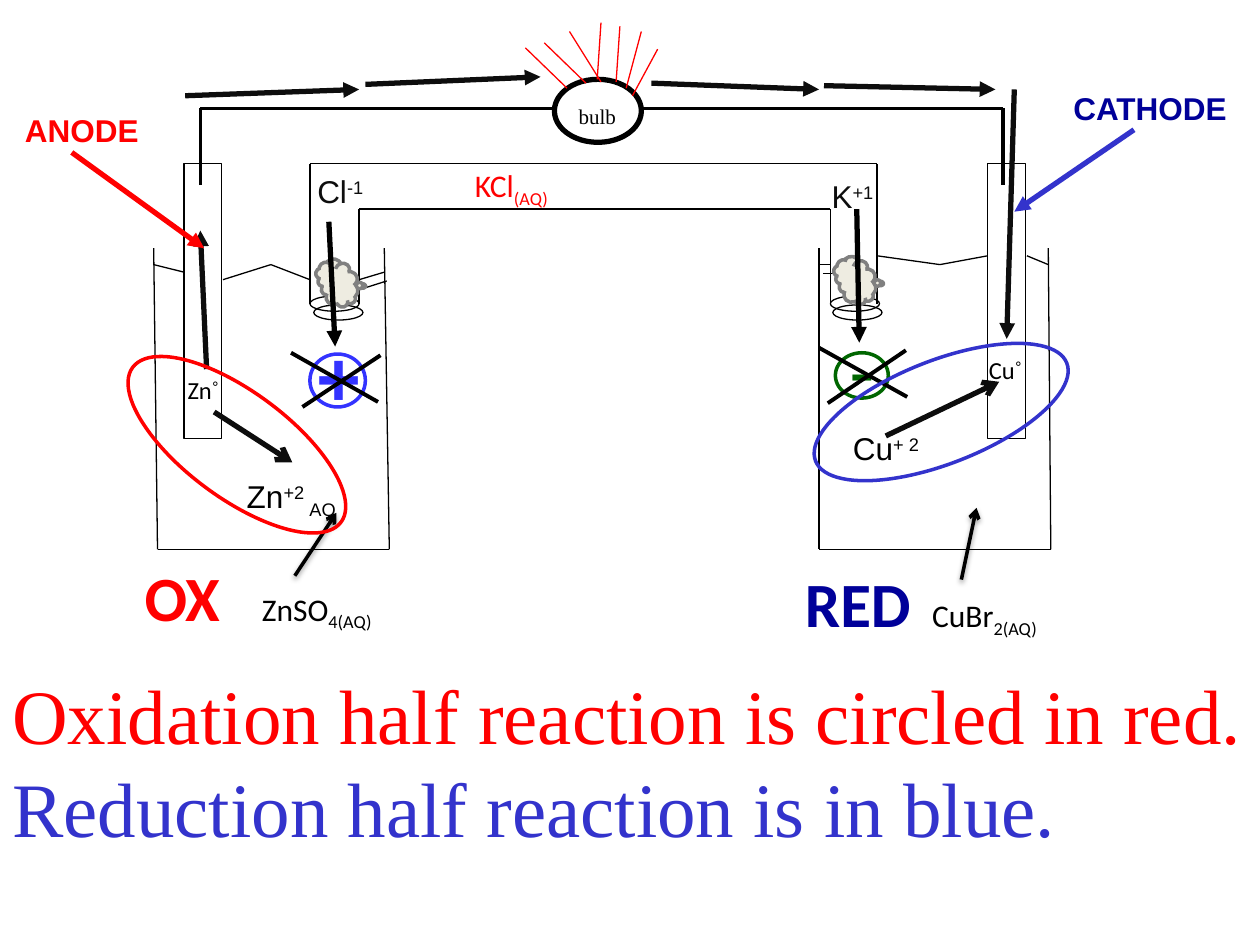
import itertools

import pptx
import pptx.dml.color
import pptx.enum.shapes
import pptx.enum.text
import pptx.oxml
import pptx.oxml.ns
import pptx.util

SHAPE = pptx.enum.shapes.MSO_SHAPE
ALIGN = pptx.enum.text.PP_ALIGN
INK = {
    "black": "000000", "soft": "0D0D0D", "white": "FFFFFF", "red": "FF0000",
    "navy": "000099", "blue": "3333CC", "bright": "3333FF",
    "green": "006600", "gray": "808080", "cotton": "EEECE1",
}
SHADOW = (
    '<a:outerShdw %s blurRad="39370" dist="20320" dir="5400000" rotWithShape="0">'
    '<a:srgbClr val="000000"><a:alpha val="38000"/></a:srgbClr></a:outerShdw>'
    % pptx.oxml.ns.nsdecls("a"))
UP, DOWN = {"base": 30}, {"base": -25}
DEGREE = ("°", {"base": 30, "font": "DejaVu Sans"})


def inch(value):
    return pptx.util.Cm(value * 2.54)


def rgb(name):
    return pptx.dml.color.RGBColor.from_string(INK[name])


def child(parent, tag, **attrs):
    node = parent.makeelement(pptx.oxml.ns.qn(tag), attrs)
    parent.append(node)
    return node


class Board:
    """Draws on one slide; places are in inches, type and lines in points."""

    def __init__(self, deck):
        self.slide = deck.slides.add_slide(deck.slide_layouts[6])
        self.font = "Arial"
        self.size = 18
        self.thin = 0.75

    def line(self, start, end, color="black", width=None, head=None, shade=False):
        item = self.slide.shapes.add_connector(
            pptx.enum.shapes.MSO_CONNECTOR.STRAIGHT, *map(inch, start + end))
        item.line.color.rgb = rgb(color)
        item.line.width = pptx.util.Pt(width or self.thin)
        if head:
            child(item.line._get_or_add_ln(), "a:tailEnd", type=head)
        effect = child(item._element.spPr, "a:effectLst")
        if shade:
            effect.append(pptx.oxml.parse_xml(SHADOW))

    def chain(self, *points, width=None):
        """Join the points with straight lines."""
        for start, end in itertools.pairwise(points):
            self.line(start, end, width=width)

    def shape(self, kind, box, color="black", width=None, fill=None, turn=0):
        item = self.slide.shapes.add_shape(kind, *map(inch, box))
        item.shadow.inherit = False
        item.rotation = turn
        item.line.color.rgb = rgb(color)
        item.line.width = pptx.util.Pt(width or self.thin)
        if fill:
            item.fill.solid()
            item.fill.fore_color.rgb = rgb(fill)
        else:
            item.fill.background()

    def frame(self, box, inset=None):
        frame = self.slide.shapes.add_textbox(*map(inch, box)).text_frame
        frame.word_wrap = True
        if inset is not None:
            frame.margin_left = frame.margin_right = inch(inset)
            frame.margin_top = frame.margin_bottom = inch(inset)
        return frame

    def fill(self, para, runs, color, size=None, font=None, bold=None, align=None):
        """Style a paragraph and add its runs."""
        para.alignment = align
        para.font.name = font or self.font
        para.font.size = pptx.util.Pt(size or self.size)
        para.font.color.rgb = rgb(color)
        para.font.bold = bold
        for text, style in runs:
            run = para.add_run()
            run.text = text
            if "base" in style:
                run.font._element.set("baseline", str(style["base"] * 1000))
            if "font" in style:
                run.font.name = style["font"]
            if "size" in style:
                run.font.size = pptx.util.Pt(style["size"])
                run.font.bold = True
                run.font.color.rgb = rgb(style["color"])

    def text(self, box, *runs, color="black", inset=None, **style):
        para = self.frame(box, inset).paragraphs[0]
        self.fill(para, runs, color, **style)
        return para

    def label(self, box, word, color, salt, count, tab):
        """Put a large word, then the salt at a tab stop."""
        big = {"size": 36, "color": color}
        para = self.text(box, (word, big), ("\t" + salt, {}), (count, DOWN),
                         font="Calibri")
        props = para._p.get_or_add_pPr()
        tabs = child(props, "a:tabLst")
        child(tabs, "a:tab", pos=str(int(inch(tab))), algn="l")
        props.insert(0, tabs)


def cells(board):
    board.chain((1.22, 1.97), (1.25, 4.36), (3.09, 4.36), (3.05, 1.97))
    board.chain((6.5, 1.97), (6.5, 4.36), (8.34, 4.36), (8.32, 1.97))
    for left in (1.46, 7.84):
        board.shape(SHAPE.RECTANGLE, (left, 1.3, 0.3, 2.18))
    # salt bridge, outer and inner wall
    board.chain((2.46, 2.41), (2.46, 1.3), (6.96, 1.3), (6.96, 2.41))
    board.chain((2.85, 2.41), (2.85, 1.66), (6.59, 1.66), (6.59, 2.41))
    for left, top in ((2.46, 2.35), (6.59, 2.35), (2.49, 2.42), (6.61, 2.42)):
        board.shape(SHAPE.OVAL, (left, top, 0.39, 0.12))
    # water level
    board.chain((1.22, 2.1), (1.46, 2.16))
    board.chain((1.77, 2.22), (2.15, 2.1), (2.46, 2.22))
    board.chain((2.85, 2.22), (3.05, 2.16))
    board.chain((2.88, 2.29), (3.07, 2.23))
    board.chain((6.5, 2.1), (6.59, 2.1))
    board.chain((6.53, 2.17), (6.61, 2.17))
    board.chain((6.96, 2.03), (7.46, 2.1), (7.84, 2.03))
    board.chain((8.15, 2.03), (8.32, 2.1))
    for left, top in ((2.49, 2.09), (6.6, 2.07)):
        board.shape(SHAPE.CLOUD_CALLOUT, (left, top, 0.39, 0.31),
                    "gray", 2, "cotton", 254.3)


def circuit(board):
    board.chain((1.59, 1.47), (1.59, 0.86), (7.96, 0.86), (7.96, 1.47), width=2)
    board.shape(SHAPE.OVAL, (4.4, 0.63, 0.69, 0.5), width=3, fill="white")
    board.text((4.52, 0.78, 0.44, 0.25), ("bulb", {}), inset=0.04, size=12,
               font="Times New Roman", align=ALIGN.CENTER)
    rays = [((4.5, 0.7), (4.17, 0.38)), ((4.65, 0.66), (4.32, 0.34)),
            ((4.77, 0.65), (4.52, 0.25)), ((4.74, 0.63), (4.77, 0.18)),
            ((4.89, 0.65), (4.92, 0.21)), ((4.97, 0.7), (5.09, 0.25)),
            ((5.02, 0.76), (5.22, 0.39))]
    for start, end in rays:
        board.line(start, end, "red")
    flow = [((1.64, 2.93), (1.59, 1.83)), ((1.47, 0.76), (2.85, 0.71)),
            ((2.9, 0.67), (4.29, 0.61)), ((5.17, 0.66), (6.5, 0.71)),
            ((6.54, 0.68), (7.9, 0.71)), ((8.05, 0.71), (7.99, 2.69))]
    for start, end in flow:
        board.line(start, end, "soft", 3, "triangle")


def ions(board):
    board.text((1.39, 2.93, 0.5, 0.34), ("Zn", {}), DEGREE, size=14, font="Calibri")
    board.text((7.75, 2.77, 0.63, 0.34), ("Cu", {}), DEGREE, size=14, font="Calibri")
    board.text((3.67, 1.27, 1.5, 0.4), ("KCl", {}), ("(AQ)", DOWN),
               color="red", font="Calibri")
    board.text((6.67, 3.36, 0.79, 0.4), ("Cu", {}), ("+ 2", UP))
    board.text((1.86, 3.74, 1.05, 0.4), ("Zn", {}), ("+2 ", UP), ("AQ", DOWN))
    board.text((2.42, 1.32, 0.63, 0.4), ("Cl", {}), ("-1", UP), color="soft")
    board.text((6.45, 1.36, 0.58, 0.4), ("K", {}), ("+1", UP),
               color="soft", align=ALIGN.RIGHT)
    board.text((2.41, 2.57, 0.49, 0.84), ("+", {}), color="bright", size=44, bold=True)
    board.text((6.64, 2.5, 0.69, 0.84), ("-", {}), color="green", size=44)
    board.shape(SHAPE.OVAL, (2.46, 2.81, 0.44, 0.42), "bright", 2)
    board.shape(SHAPE.OVAL, (6.63, 2.8, 0.42, 0.36), "green", 2)
    for start, end in (((2.61, 1.76), (2.66, 2.75)), ((6.8, 1.66), (6.82, 2.72))):
        board.line(start, end, width=3, head="triangle")
    crosses = [((2.31, 2.8), (3, 3.19)), ((2.4, 3.23), (3.02, 2.82)),
               ((6.5, 2.76), (7.2, 3.15)), ((6.57, 3.2), (7.19, 2.78))]
    for start, end in crosses:
        board.line(start, end, width=2.25)
    for start, end in (((1.7, 3.27), (2.32, 3.67)), ((7.03, 3.46), (7.93, 3.03))):
        board.line(start, end, "soft", 3, "arrow")


def notes(board):
    board.label((1.05, 4.38, 2.08, 0.71), "OX", "red", "ZnSO", "4(AQ)", 0.93)
    board.label((6.29, 4.43, 2.17, 0.71), "RED", "navy", "CuBr", "2(AQ)", 1.01)
    for start, end in (((2.34, 4.57), (2.67, 4.07)), ((7.63, 4.6), (7.75, 4.03))):
        board.line(start, end, width=2, head="arrow", shade=True)
    board.text((0.1, 0.83, 1.4, 0.4), ("ANODE", {}), color="red", bold=True)
    board.text((8.42, 0.66, 1.58, 0.4), ("CATHODE", {}), color="navy", bold=True)
    board.line((0.57, 1.21), (1.62, 1.97), "red", 3, "triangle")
    board.line((9, 1.03), (8.05, 1.68), "blue", 3, "triangle")
    board.shape(SHAPE.OVAL, (0.85, 3.11, 2.06, 0.84), "red", 2, turn=36.6)
    board.shape(SHAPE.OVAL, (6.4, 2.86, 2.14, 0.82), "blue", 2, turn=338.7)
    frame = board.frame((0, 5.25, 10, 1.58))
    big = {"size": 44, "font": "Times New Roman"}
    board.fill(frame.paragraphs[0],
               [("Oxidation half reaction is circled in red.", {})], "red", **big)
    board.fill(frame.add_paragraph(),
               [("Reduction half reaction is in blue.", {})], "blue", **big)


def main():
    deck = pptx.Presentation()
    deck.slide_width, deck.slide_height = inch(10), inch(7.5)
    board = Board(deck)
    for part in (cells, circuit, ions, notes):
        part(board)
    deck.save("out.pptx")


if __name__ == "__main__":
    main()
